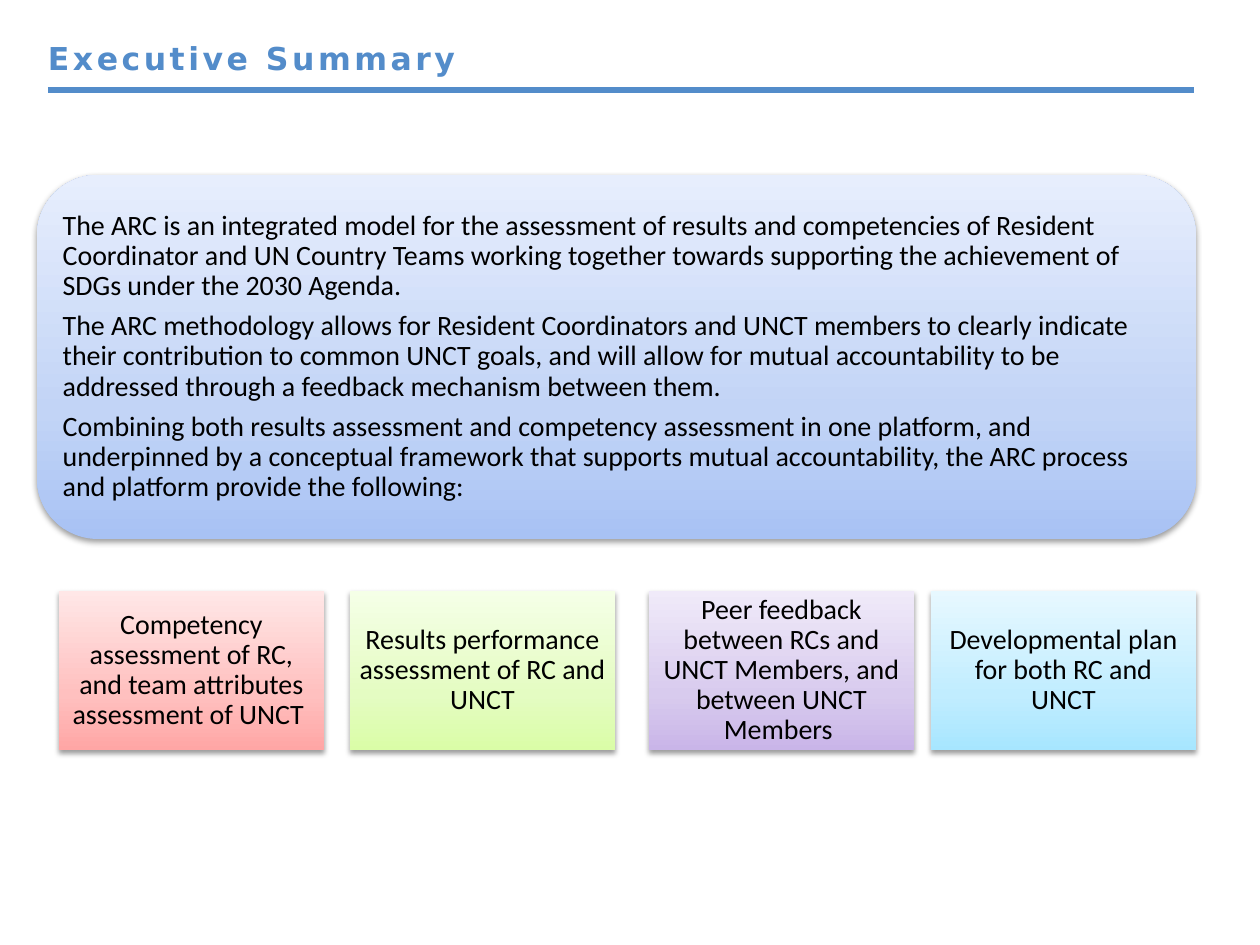
from lxml import etree
from pptx import Presentation
from pptx.dml.color import RGBColor
from pptx.enum.shapes import MSO_CONNECTOR, MSO_SHAPE
from pptx.enum.text import MSO_ANCHOR, PP_ALIGN
from pptx.oxml import parse_xml
from pptx.oxml.ns import nsdecls, qn
from pptx.util import Emu, Inches, Pt

LEFT, CENTER = PP_ALIGN.LEFT, PP_ALIGN.CENTER
TOP, MIDDLE = MSO_ANCHOR.TOP, MSO_ANCHOR.MIDDLE
RECT, ROUNDED = MSO_SHAPE.RECTANGLE, MSO_SHAPE.ROUNDED_RECTANGLE
STRAIGHT = MSO_CONNECTOR.STRAIGHT

BLACK = RGBColor(0x00, 0x00, 0x00)
TITLE_BLUE = RGBColor(0x53, 0x8C, 0xCA)

# Gradient colours from bottom to top
STOPS = (0, 35, 100)
BLUE = (RGBColor(0xA8, 0xC2, 0xF4), RGBColor(0xC2, 0xD4, 0xF6), RGBColor(0xE7, 0xEE, 0xFD))
RED = (RGBColor(0xFF, 0xA6, 0xA5), RGBColor(0xFF, 0xC0, 0xBF), RGBColor(0xFF, 0xE7, 0xE7))
GREEN = (RGBColor(0xDA, 0xFD, 0xA7), RGBColor(0xE4, 0xFC, 0xC2), RGBColor(0xF5, 0xFF, 0xE7))
PURPLE = (RGBColor(0xC9, 0xB5, 0xE8), RGBColor(0xD8, 0xCB, 0xEE), RGBColor(0xF0, 0xEA, 0xF9))
CYAN = (RGBColor(0xA7, 0xE6, 0xFF), RGBColor(0xC1, 0xED, 0xFF), RGBColor(0xE7, 0xF8, 0xFF))

SUMMARY = [
    "The ARC is an integrated model for the assessment of results and competencies of "
    "Resident Coordinator and UN Country Teams working together towards supporting the "
    "achievement of SDGs under the 2030 Agenda.",
    "The ARC methodology allows for Resident Coordinators and UNCT members to clearly "
    "indicate their contribution to common UNCT goals, and will allow for mutual "
    "accountability to be addressed through a feedback mechanism between them.",
    "Combining both results assessment and competency assessment in one platform, and "
    "underpinned by a conceptual framework that supports mutual accountability, the ARC "
    "process and platform provide the following:",
]

# Offset within the row, text, gradient
CARDS = [
    (0, "Competency assessment of RC, and team attributes assessment of UNCT ", RED),
    (291, "Results performance assessment of RC and UNCT", GREEN),
    (590, "Peer feedback between RCs and UNCT Members, and between UNCT Members ", PURPLE),
    (872, "Developmental plan for both RC and UNCT", CYAN),
]
CARD_WIDTH = 265


def px(length):
    return Emu(round(length * 914400 / 126))


def write(shape, texts, font="Calibri", size=16, color=BLACK, bold=False, align=LEFT,
          anchor=MIDDLE, inset=0, line_spacing=0.9, gap=0, tracking=0):
    frame = shape.text_frame
    frame.word_wrap = True
    frame.vertical_anchor = anchor
    frame.margin_left = frame.margin_right = px(inset)
    frame.margin_top = frame.margin_bottom = px(inset)
    for index, text in enumerate(texts):
        para = frame.add_paragraph() if index else frame.paragraphs[0]
        para.alignment = align
        para.line_spacing = line_spacing
        para.space_after = Pt(gap)
        span = para.add_run()
        span.text = text
        span.font.name = font
        span.font.size = Pt(size)
        span.font.bold = bold
        span.font.color.rgb = color
        if tracking:
            span.font._element.set("spc", str(tracking * 100))


def add_gradient_shape(page, kind, left, top, width, height, colors):
    shape = page.shapes.add_shape(kind, px(left), px(top), px(width), px(height))
    shape.line.fill.background()
    stops = "".join(
        f'<a:gs pos="{stop * 1000}"><a:srgbClr val="{color}"/></a:gs>'
        for stop, color in zip(STOPS, colors))
    gradient = parse_xml(
        f'<a:gradFill {nsdecls("a")} rotWithShape="1"><a:gsLst>{stops}</a:gsLst>'
        '<a:lin ang="16200000" scaled="1"/></a:gradFill>')
    properties = shape._element.spPr
    properties.find(qn("a:prstGeom")).addnext(gradient)

    # Soft shadow below the shape
    shape.shadow.inherit = False
    shadow = parse_xml(
        f'<a:outerShdw {nsdecls("a")} blurRad="{Pt(3.1)}" dist="{Pt(1.6)}" dir="5400000" '
        'rotWithShape="0"><a:srgbClr val="000000"><a:alpha val="38000"/></a:srgbClr>'
        '</a:outerShdw>')
    properties.find(qn("a:effectLst")).append(shadow)
    return shape


def add_header(page, left, top, width):
    rule_top = top + 48
    rule = page.shapes.add_connector(
        STRAIGHT, px(left), px(rule_top), px(left + width), px(rule_top))
    rule.line.color.rgb = TITLE_BLUE
    rule.line.width = Pt(3)
    etree.SubElement(rule._element.spPr, qn("a:effectLst"))
    title = page.shapes.add_textbox(px(left), px(top), px(567), px(94))
    write(title, ["Executive Summary"], font="DejaVu Sans", size=18, color=TITLE_BLUE,
          bold=True, anchor=TOP, line_spacing=Pt(20), tracking=2)


def add_summary(page, left, top, width, height):
    panel = add_gradient_shape(page, ROUNDED, left, top, width, height, BLUE)
    write(panel, SUMMARY, inset=8, gap=5.6)


def add_cards(page, left, top, height):
    for offset, text, colors in CARDS:
        card = add_gradient_shape(page, RECT, left + offset, top, CARD_WIDTH, height, colors)
        write(card, [text], align=CENTER, inset=9)


def main():
    deck = Presentation()
    deck.slide_width, deck.slide_height = Inches(10), Inches(7.5)
    page = deck.slides.add_slide(deck.slide_layouts[6])
    add_header(page, 48, 42, 1146)
    add_cards(page, 59, 591, 159)
    add_summary(page, 37, 175, 1159, 364)
    deck.save("out.pptx")


if __name__ == "__main__":
    main()
